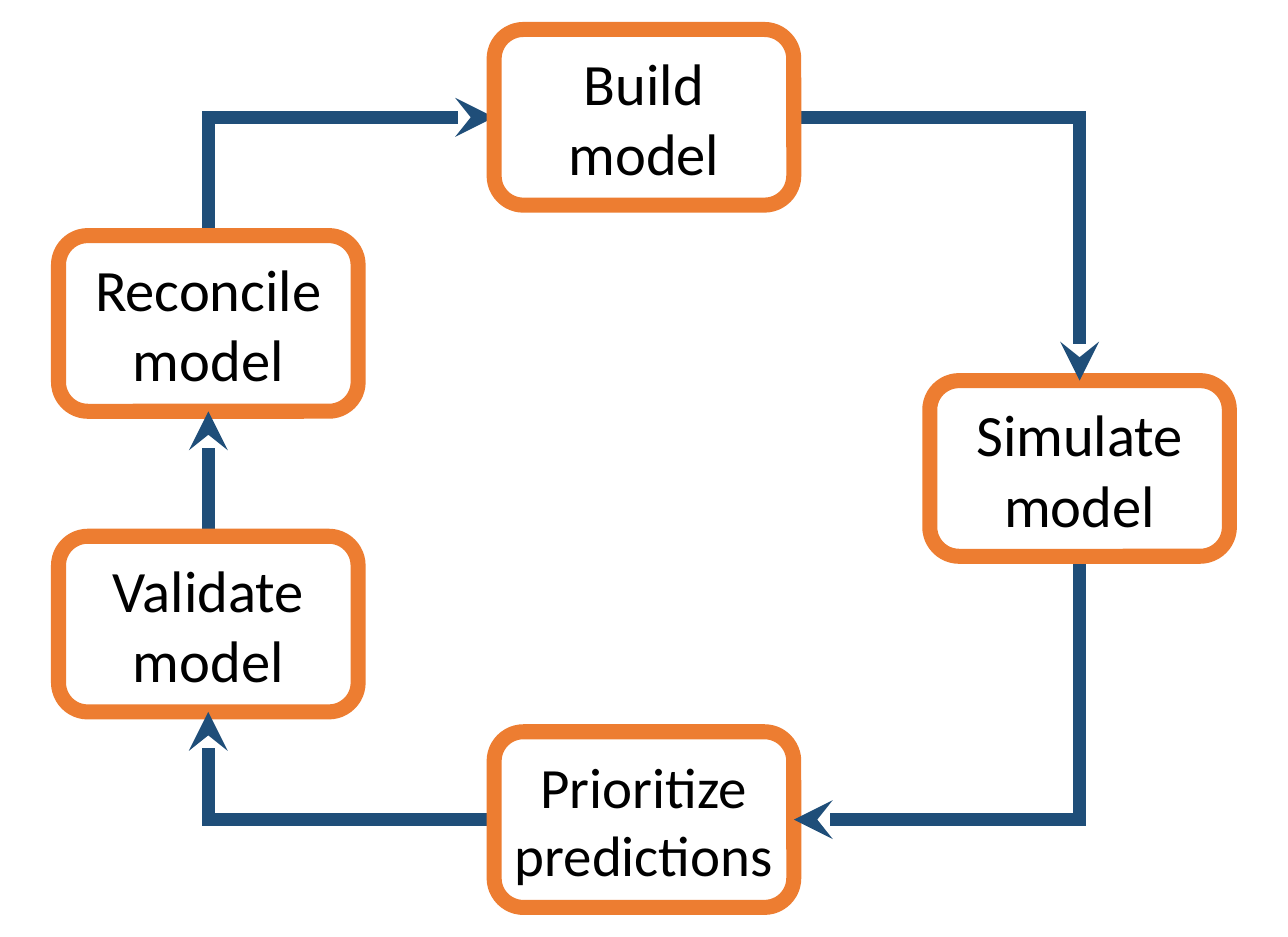
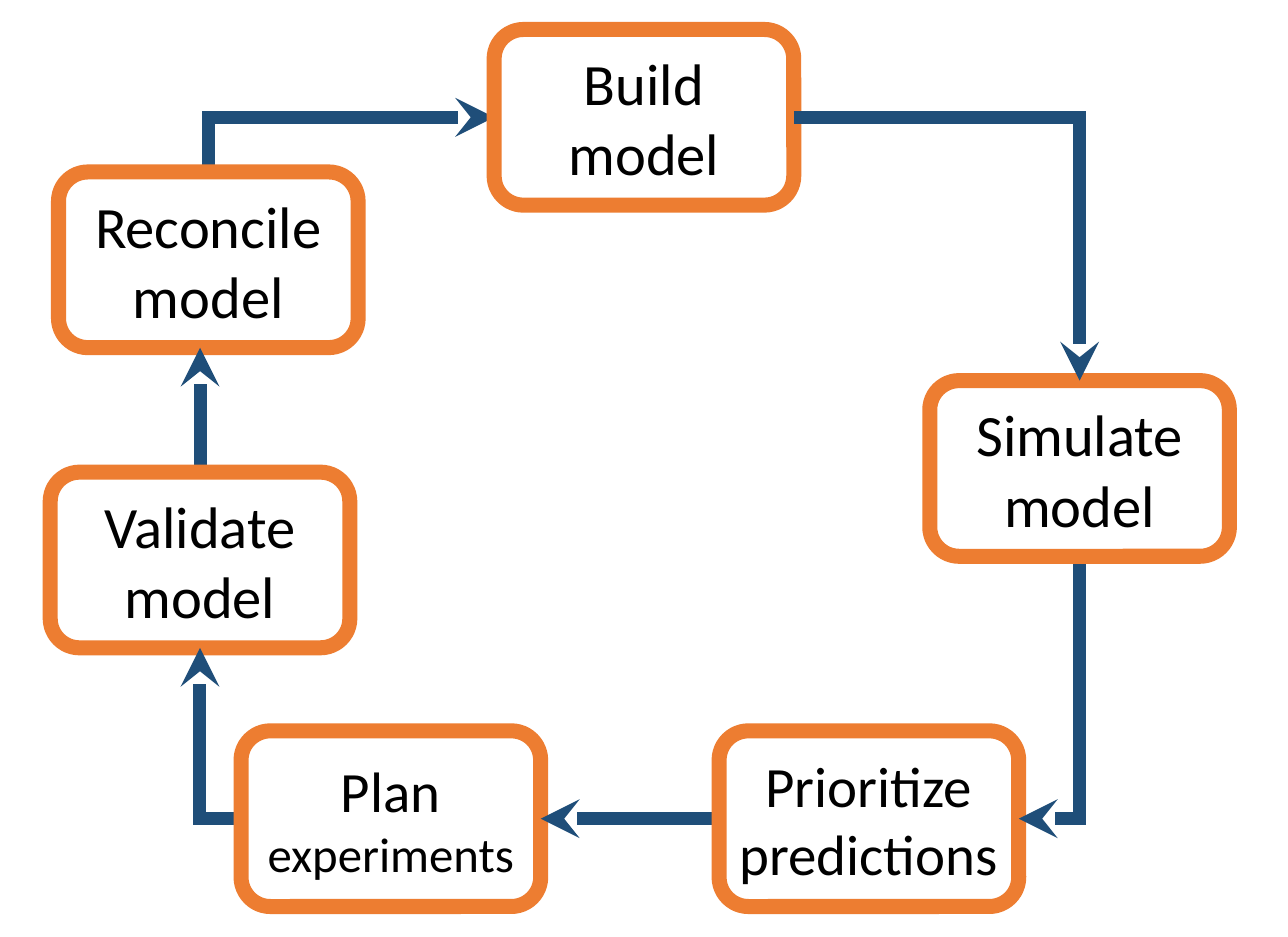
from lxml.etree import SubElement
from pptx import Presentation
from pptx.dml.color import RGBColor
from pptx.enum.shapes import MSO_CONNECTOR, MSO_SHAPE
from pptx.enum.text import MSO_ANCHOR, PP_ALIGN
from pptx.oxml.ns import qn
from pptx.util import Cm, Pt

ORANGE = RGBColor(0xED, 0x7D, 0x31)
BLUE = RGBColor(0x1F, 0x4E, 0x79)
WHITE = RGBColor(0xFF, 0xFF, 0xFF)
BLACK = RGBColor(0x00, 0x00, 0x00)
FONT = "Calibri"

# Lengths in centimetres
SLIDE_W, SLIDE_H = 27.94, 20.32
BOX_W, BOX_H = 6.5, 3.81
LEFT, TOP = 1.27, 0.64
RIGHT = SLIDE_W - LEFT - BOX_W
BOTTOM = SLIDE_H - TOP - BOX_H
CENTRE, MIDDLE = (SLIDE_W - BOX_W) / 2, (SLIDE_H - BOX_H) / 2
LOW_ROW = 15.85

# Connection sites of a box
NORTH, WEST, SOUTH, EAST = range(4)

# Lines of text with their sizes in points
LABELS = {
    "build": [("Build", 36), ("model", 36)],
    "simulate": [("Simulate", 36), ("model", 36)],
    "prioritize": [("Prioritize", 35), ("predictions", 35)],
    "plan": [("Plan", 35), ("experiments", 30)],
    "validate": [("Validate", 36), ("model", 36)],
    "reconcile": [("Reconcile", 36), ("model", 36)],
}

SHARED_ARROWS = [
    ("build", EAST, "simulate", NORTH),
    ("simulate", SOUTH, "prioritize", EAST),
    ("validate", NORTH, "reconcile", SOUTH),
    ("reconcile", NORTH, "build", WEST),
]

# Boxes run from back to front; arrows lie behind the box they leave,
# except those that leave a box named in "over".
CYCLES = [
    {
        "boxes": {
            "reconcile": (LEFT, 5.11),
            "validate": (LEFT, 11.63),
            "prioritize": (CENTRE, BOTTOM),
            "simulate": (RIGHT, MIDDLE),
            "build": (CENTRE, TOP),
        },
        "arrows": SHARED_ARROWS + [("prioritize", WEST, "validate", SOUTH)],
        "over": (),
    },
    {
        "boxes": {
            "reconcile": (LEFT, 3.73),
            "validate": (1.09, 10.24),
            "build": (CENTRE, TOP),
            "plan": (5.23, LOW_ROW),
            "prioritize": (15.6, LOW_ROW),
            "simulate": (RIGHT, MIDDLE),
        },
        "arrows": SHARED_ARROWS + [
            ("prioritize", WEST, "plan", EAST),
            ("plan", WEST, "validate", SOUTH),
        ],
        "over": ("build",),
    },
]


def write_lines(shape, lines, font=FONT, color=BLACK, align=PP_ALIGN.CENTER):
    frame = shape.text_frame
    frame.word_wrap = True
    frame.vertical_anchor = MSO_ANCHOR.MIDDLE
    frame.margin_left = frame.margin_right = 0
    for index, (text, size) in enumerate(lines):
        para = frame.add_paragraph() if index else frame.paragraphs[0]
        para.alignment = align
        span = para.add_run()
        span.text = text
        span.font.name = font
        span.font.size = Pt(size)
        span.font.color.rgb = color


def add_box(page, lines, left, top):
    box = page.shapes.add_shape(
        MSO_SHAPE.ROUNDED_RECTANGLE, Cm(left), Cm(top), Cm(BOX_W), Cm(BOX_H))
    box.shadow.inherit = False
    box.fill.solid()
    box.fill.fore_color.rgb = WHITE
    box.line.color.rgb = ORANGE
    box.line.width = Pt(9.25)
    write_lines(box, lines)
    return box


def site_point(box, site):
    across = {WEST: 0, EAST: box.width}.get(site, box.width // 2)
    down = {NORTH: 0, SOUTH: box.height}.get(site, box.height // 2)
    return box.left + across, box.top + down


def bend_once(arrow, start, end, vertical_first):
    """Turn the connector into one with a single right-angled corner."""
    (x1, y1), (x2, y2) = start, end
    properties = arrow._element.spPr
    properties.find(qn("a:prstGeom")).set("prst", "bentConnector2")
    if not vertical_first:
        return
    # A quarter turn about the centre swaps width and height.
    width, height = abs(y2 - y1), abs(x2 - x1)
    arrow.left, arrow.top = (x1 + x2 - width) // 2, (y1 + y2 - height) // 2
    arrow.width, arrow.height = width, height
    frame = properties.find(qn("a:xfrm"))
    frame.set("rot", "5400000")
    frame.set("flipH", str(int(y2 < y1)))
    frame.set("flipV", str(int(x2 > x1)))


def add_arrow(page, source, source_site, target, target_site):
    start, end = site_point(source, source_site), site_point(target, target_site)
    straight = abs(source_site - target_site) == 2
    aligned = True
    if straight and source_site in (NORTH, SOUTH):
        aligned = start[0] == end[0]
        end = (start[0], end[1])
    kind = MSO_CONNECTOR.STRAIGHT if straight else MSO_CONNECTOR.ELBOW
    arrow = page.shapes.add_connector(kind, *start, *end)
    arrow.begin_connect(source, source_site)
    if aligned:
        arrow.end_connect(target, target_site)
    if not straight:
        bend_once(arrow, start, end, source_site in (NORTH, SOUTH))
    arrow.line.color.rgb = BLUE
    arrow.line.width = Pt(8)
    line = arrow.line._get_or_add_ln()
    SubElement(line, qn("a:miter"), lim="800000")
    SubElement(line, qn("a:tailEnd"), type="stealth")
    SubElement(arrow._element.spPr, qn("a:effectLst"))
    return arrow


def add_cycle(deck, cycle):
    page = deck.slides.add_slide(deck.slide_layouts[6])
    boxes = {name: add_box(page, LABELS[name], *place)
             for name, place in cycle["boxes"].items()}
    for source, source_site, target, target_site in cycle["arrows"]:
        arrow = add_arrow(
            page, boxes[source], source_site, boxes[target], target_site)
        if source not in cycle["over"]:
            boxes[source]._element.addprevious(arrow._element)


def main():
    deck = Presentation()
    deck.slide_width, deck.slide_height = Cm(SLIDE_W), Cm(SLIDE_H)
    for cycle in CYCLES:
        add_cycle(deck, cycle)
    deck.save("out.pptx")


if __name__ == "__main__":
    main()
